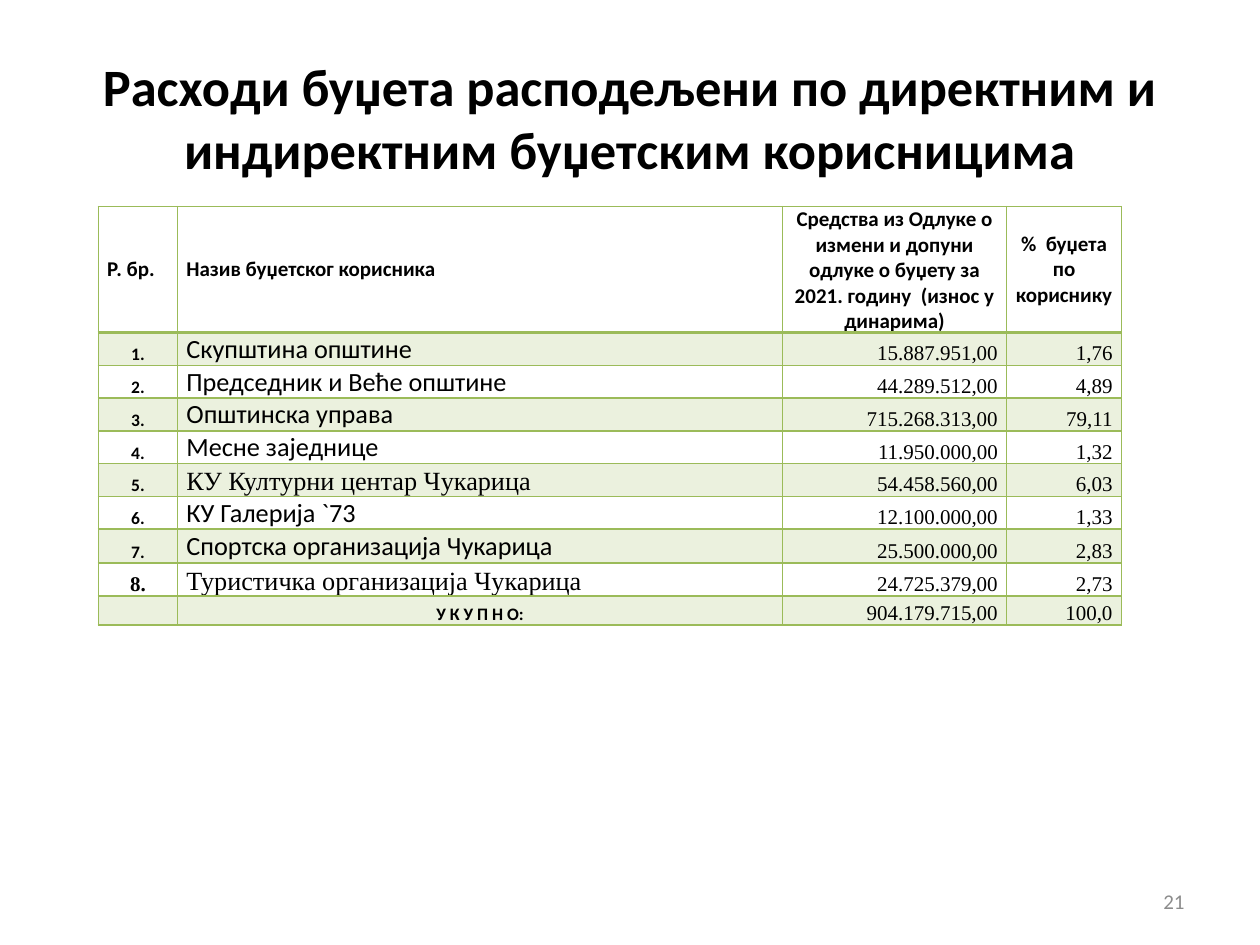
import pptx
import pptx.util
import pptx.dml.color
import pptx.enum.text
import pptx.oxml
import pptx.oxml.ns

Inches, Pt = pptx.util.Inches, pptx.util.Pt
RGBColor = pptx.dml.color.RGBColor
ALIGN, ANCHOR = pptx.enum.text.PP_ALIGN, pptx.enum.text.MSO_ANCHOR

BLACK = RGBColor(0x00, 0x00, 0x00)
GRAY = RGBColor(0x8C, 0x8C, 0x8C)
GREEN = RGBColor(0x9B, 0xBB, 0x59)
PALE_GREEN = RGBColor(0xEB, 0xF1, 0xDE)
SANS, SERIF = "Calibri", "Times New Roman"

TITLE = "Расходи буџета расподељени по директним и индиректним буџетским корисницима"
PAGE_NUMBER = "21"
HEADER = [
    "Р. бр.",
    "Назив буџетског корисника",
    "Средства из Одлуке о измени и допуни одлуке о буџету за 2021. годину  (износ у динарима)",
    "%  буџета по кориснику",
]
# name, name font, amount, share
USERS = [
    ("Скупштина општине", SANS, "15.887.951,00", "1,76"),
    ("Председник и Веће општине", SANS, "44.289.512,00", "4,89"),
    ("Општинска управа", SANS, "715.268.313,00", "79,11"),
    ("Месне заједнице", SANS, "11.950.000,00", "1,32"),
    ("КУ Културни центар Чукарица", SERIF, "54.458.560,00", "6,03"),
    ("КУ Галерија `73", SANS, "12.100.000,00", "1,33"),
    ("Спортска организација Чукарица", SANS, "25.500.000,00", "2,83"),
    ("Туристичка организација Чукарица", SERIF, "24.725.379,00", "2,73"),
]
TOTAL = ("У К У П Н О:", "904.179.715,00", "100,0")
COL_WIDTHS = [0.63, 4.8, 1.78, 0.91]
ROW_HEIGHTS = [0.63] + [0.26] * 6 + [0.27, 0.26, 0.23]


def write(tf, text, size, font=SANS, bold=False, align=ALIGN.LEFT, color=BLACK):
    p = tf.paragraphs[0]
    p.text = text
    p.alignment = align
    for r in p.runs:
        r.font.size, r.font.name, r.font.bold = Pt(size), font, bold
        r.font.color.rgb = color
    if not text:  # keeps the empty row from growing
        p._p.get_or_add_endParaRPr().set("sz", str(size * 100))


def add_text(slide, box, text, size, **style):
    tf = slide.shapes.add_textbox(*map(Inches, box)).text_frame
    tf.word_wrap = True
    tf.vertical_anchor = ANCHOR.MIDDLE
    write(tf, text, size, **style)


def set_borders(cell, widths):
    """Draw green borders; widths maps a side (L, R, T, B) to points."""
    tc_pr = cell._tc.get_or_add_tcPr()
    for i, (side, width) in enumerate(widths.items()):
        tc_pr.insert(i, pptx.oxml.parse_xml(
            f'<a:ln{side} {pptx.oxml.ns.nsdecls("a")} w="{Pt(width)}">'
            f'<a:solidFill><a:srgbClr val="{GREEN}"/></a:solidFill></a:ln{side}>'))


def table_rows():
    """Each cell is (text, size, font, bold, alignment)."""
    rows = [[(text, 12, SANS, True, ALIGN.LEFT if c < 2 else ALIGN.CENTER)
             for c, text in enumerate(HEADER)]]

    def figures(*texts):
        return [(text, 12, SERIF, False, ALIGN.RIGHT) for text in texts]

    for n, (name, font, amount, share) in enumerate(USERS, 1):
        number_style = (12, SERIF) if n == len(USERS) else (10, SANS)
        rows.append([(f"{n}.", *number_style, True, ALIGN.CENTER),
                     (name, 15, font, False, ALIGN.LEFT),
                     *figures(amount, share)])
    label, amount, share = TOTAL
    rows.append([("", 10, SANS, True, ALIGN.CENTER),
                 (label, 10, SANS, True, ALIGN.CENTER),
                 *figures(amount, share)])
    return rows


def add_budget_table(slide):
    rows = table_rows()
    table = slide.shapes.add_table(
        len(rows), len(COL_WIDTHS), Inches(0.78), Inches(1.64),
        Inches(sum(COL_WIDTHS)), Inches(sum(ROW_HEIGHTS))).table
    table.first_row = table.horz_banding = False
    for column, width in zip(table.columns, COL_WIDTHS):
        column.width = Inches(width)
    for i, (row, height) in enumerate(zip(rows, ROW_HEIGHTS)):
        table.rows[i].height = Inches(height)
        for j, style in enumerate(row):
            cell = table.cell(i, j)
            cell.margin_left = cell.margin_right = Inches(0.07)
            cell.margin_top = cell.margin_bottom = 0
            cell.vertical_anchor = ANCHOR.BOTTOM if i else ANCHOR.MIDDLE
            write(cell.text_frame, *style)
            if i % 2:
                cell.fill.solid()
                cell.fill.fore_color.rgb = PALE_GREEN
            else:
                cell.fill.background()
            set_borders(cell, {"L": 1, "R": 1, "T": 2 if i == 1 else 1,
                               "B": 1 if i else 2})


def main():
    prs = pptx.Presentation()
    prs.slide_width, prs.slide_height = Inches(10), Inches(7.5)
    slide = prs.slides.add_slide(prs.slide_layouts[6])
    add_text(slide, (0.5, 0.3, 9, 1.25), TITLE, 30, bold=True, align=ALIGN.CENTER)
    add_budget_table(slide)
    add_text(slide, (7.17, 6.95, 2.33, 0.4), PAGE_NUMBER, 12,
             align=ALIGN.RIGHT, color=GRAY)
    prs.save("out.pptx")


if __name__ == "__main__":
    main()
